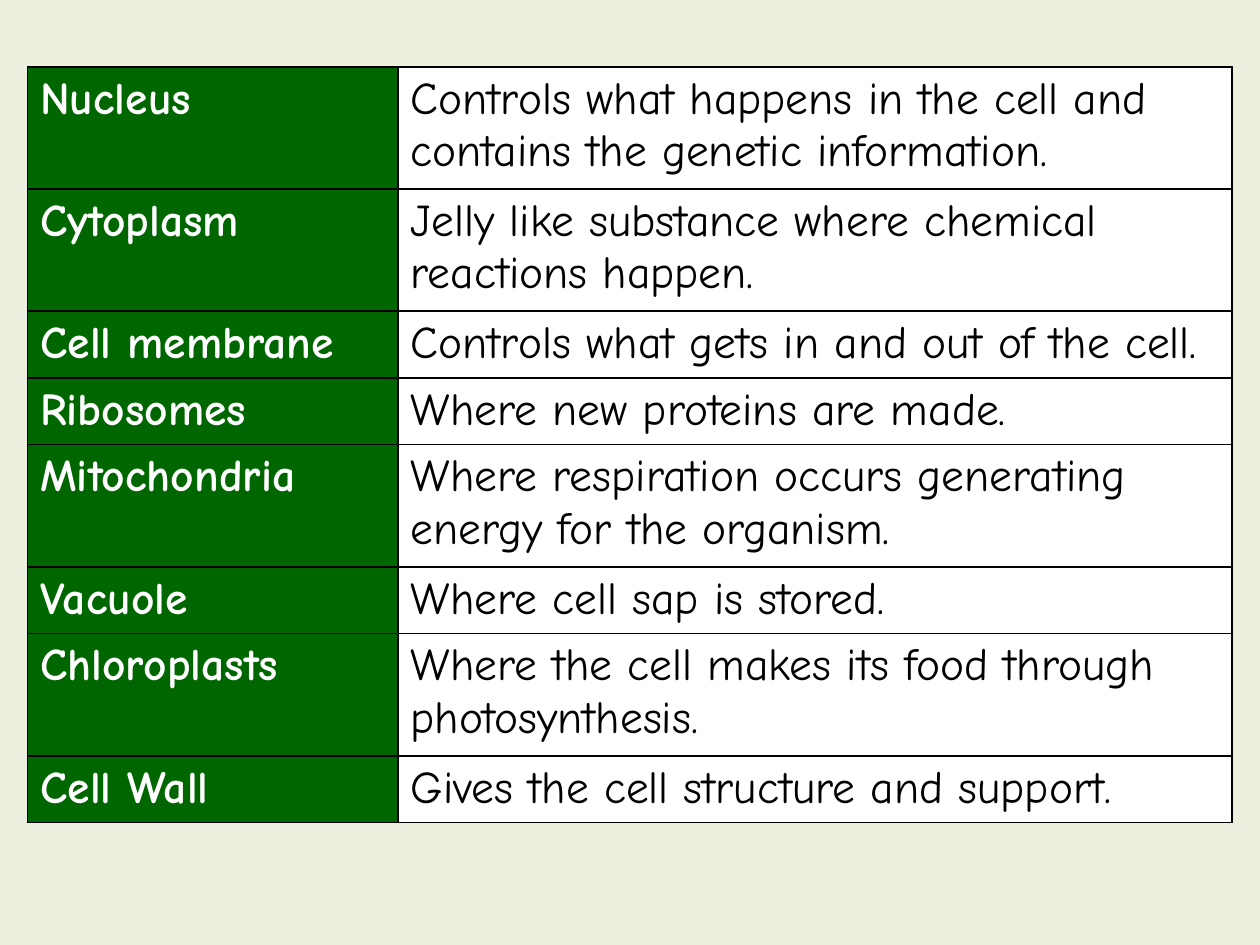
from dataclasses import dataclass

from lxml import etree
from pptx import Presentation, util as u
from pptx.dml.color import RGBColor
from pptx.oxml.ns import qn


@dataclass(frozen=True)
class Theme:
    background: str = "EBF1DE"
    term_fill: str = "006600"
    term_text: str = "FFFFFF"
    role_fill: str = "FFFFFF"
    role_text: str = "000000"
    border: str = "000000"
    border_width: float = 1
    font: str = "Comic Neue"
    text_size: float = 26


@dataclass(frozen=True)
class Organelle:
    term: str
    role: str
    lines: int = 1


THEME = Theme()
SLIDE_WIDTH, SLIDE_HEIGHT = u.Inches(10), u.Inches(7.5)
LEFT, TOP = int(SLIDE_WIDTH * 0.022), u.Inches(0.53)
TABLE_WIDTH = SLIDE_WIDTH - 2 * LEFT
TERM_WIDTH = int(SLIDE_WIDTH * 0.294)
ROW_HEIGHTS = {1: u.Inches(0.53), 2: u.Inches(0.97)}  # by lines of text

ORGANELLES = [
    Organelle("Nucleus", "Controls what happens in the cell and contains the genetic information.", 2),
    Organelle("Cytoplasm", "Jelly like substance where chemical reactions happen.", 2),
    Organelle("Cell membrane", "Controls what gets in and out of the cell."),
    Organelle("Ribosomes", "Where new proteins are made."),
    Organelle("Mitochondria", "Where respiration occurs generating energy for the organism.", 2),
    Organelle("Vacuole", "Where cell sap is stored."),
    Organelle("Chloroplasts", "Where the cell makes its food through photosynthesis.", 2),
    Organelle("Cell Wall", "Gives the cell structure and support."),
]


def add_borders(cell) -> None:
    properties = cell._tc.get_or_add_tcPr()
    for side in ("lnL", "lnR", "lnT", "lnB"):
        line = etree.SubElement(properties, qn(f"a:{side}"), w=str(u.Pt(THEME.border_width)))
        fill = etree.SubElement(line, qn("a:solidFill"))
        etree.SubElement(fill, qn("a:srgbClr"), val=THEME.border)


def fill_cell(cell, wording: str, fill: str, color: str, bold: bool) -> None:
    add_borders(cell)
    cell.fill.solid()
    cell.fill.fore_color.rgb = RGBColor.from_string(fill)
    run = cell.text_frame.paragraphs[0].add_run()
    run.text = wording
    run.font.name = THEME.font
    run.font.size = u.Pt(THEME.text_size)
    run.font.bold = bold
    run.font.color.rgb = RGBColor.from_string(color)


def add_organelle_table(slide, organelles: list[Organelle]) -> None:
    height = sum(ROW_HEIGHTS[organelle.lines] for organelle in organelles)
    table = slide.shapes.add_table(
        len(organelles), 2, LEFT, TOP, TABLE_WIDTH, height).table
    table.first_row = table.horz_banding = False
    table.columns[0].width = TERM_WIDTH
    table.columns[1].width = TABLE_WIDTH - TERM_WIDTH
    for row, organelle in zip(table.rows, organelles):
        row.height = ROW_HEIGHTS[organelle.lines]
        term_cell, role_cell = row.cells
        fill_cell(term_cell, organelle.term, THEME.term_fill, THEME.term_text, True)
        fill_cell(role_cell, organelle.role, THEME.role_fill, THEME.role_text, False)


def main() -> None:
    deck = Presentation()
    deck.slide_width, deck.slide_height = SLIDE_WIDTH, SLIDE_HEIGHT
    slide = deck.slides.add_slide(deck.slide_layouts[6])
    slide.background.fill.solid()
    slide.background.fill.fore_color.rgb = RGBColor.from_string(THEME.background)
    add_organelle_table(slide, ORGANELLES)
    deck.save("out.pptx")


if __name__ == "__main__":
    main()
